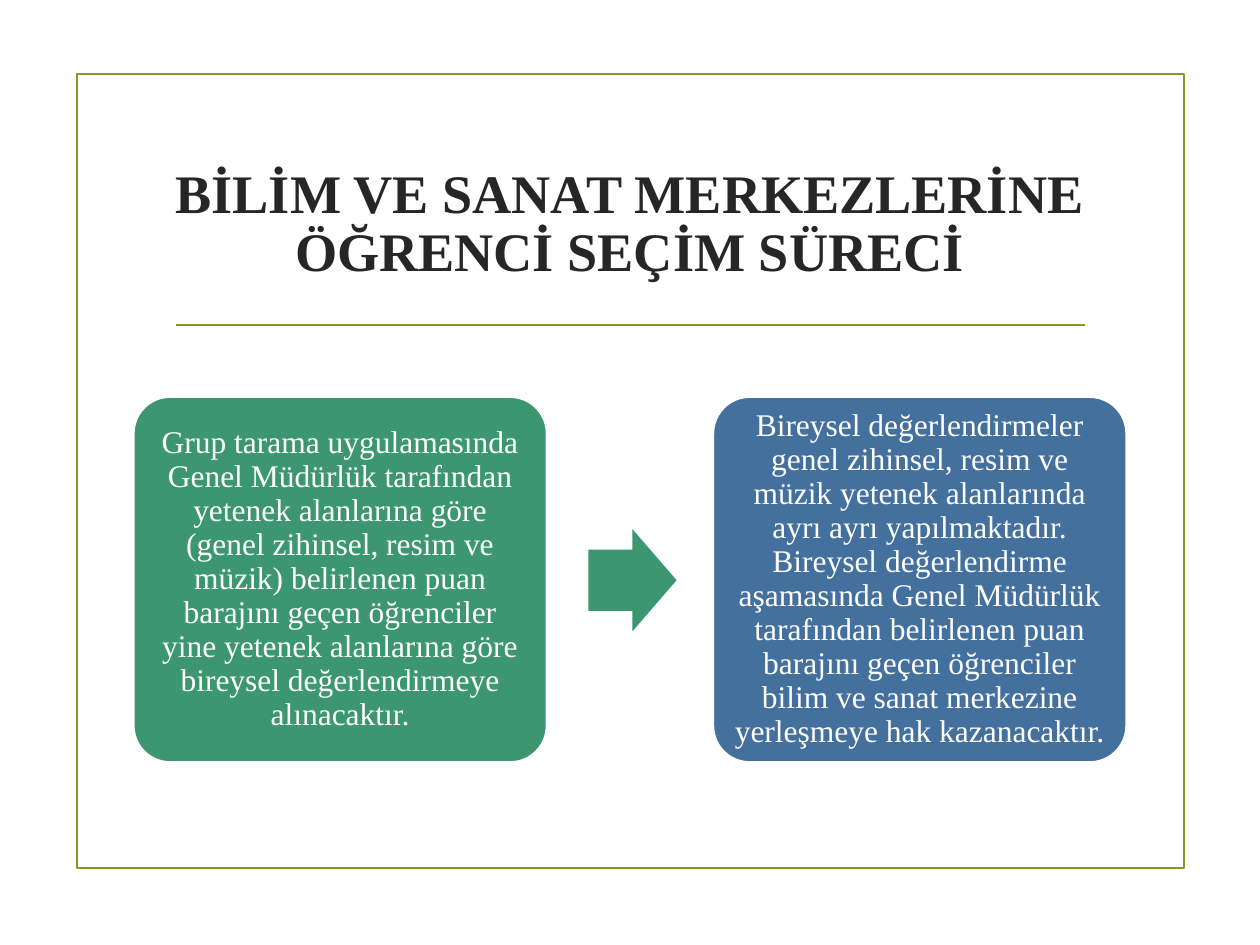
import pptx
import pptx.util
import pptx.dml.color
import pptx.enum.shapes
import pptx.enum.text
import lxml.etree
import pptx.oxml.ns

Inches = pptx.util.Inches
Pt = pptx.util.Pt
MSO_SHAPE = pptx.enum.shapes.MSO_SHAPE
COLORS = {"olive": "83992A", "green": "3C9770", "blue": "44709D",
          "title": "262626", "white": "FFFFFF"}
FONT = "Times New Roman"


def rgb(name):
    return pptx.dml.color.RGBColor.from_string(COLORS[name])


def write(tf, text, size, color, bold, after):
    tf.word_wrap = True
    tf.auto_size = pptx.enum.text.MSO_AUTO_SIZE.NONE
    tf.vertical_anchor = pptx.enum.text.MSO_ANCHOR.MIDDLE
    p = tf.paragraphs[0]
    p.text = text
    p.alignment = pptx.enum.text.PP_ALIGN.CENTER
    p.line_spacing = 0.9
    p.space_before = Pt(0)
    p.space_after = Pt(after)
    p.font.name = FONT
    p.font.size = Pt(size)
    p.font.bold = bold
    p.font.color.rgb = rgb(color)


prs = pptx.Presentation()
prs.slide_width = Inches(10)
prs.slide_height = Inches(7.5)
s = prs.slides.add_slide(prs.slide_layouts[5])

title = s.shapes.title
title.left, title.top = Inches(1.06), Inches(1.07)
title.width, title.height = Inches(7.87), Inches(1.43)
write(title.text_frame, "BİLİM VE SANAT MERKEZLERİNE ÖĞRENCİ SEÇİM SÜRECİ",
      31, "title", True, 6)

frame = s.shapes.add_shape(MSO_SHAPE.RECTANGLE, Inches(0.61), Inches(0.59),
                           Inches(8.79), Inches(6.3))
frame.shadow.inherit = False
frame.fill.background()
frame.line.color.rgb = rgb("olive")
frame.line.width = Pt(1.25)

rule = s.shapes.add_connector(pptx.enum.shapes.MSO_CONNECTOR.STRAIGHT,
                              Inches(1.4), Inches(2.58), Inches(8.61), Inches(2.58))
rule.line.color.rgb = rgb("olive")
rule.line.width = Pt(1.25)
lxml.etree.SubElement(rule._element.spPr, pptx.oxml.ns.qn("a:effectLst"))

steps = [
    (1.06, "green",
     "Grup tarama uygulamasında Genel Müdürlük tarafından yetenek alanlarına göre "
     "(genel zihinsel, resim ve müzik) belirlenen puan barajını geçen öğrenciler "
     "yine yetenek alanlarına göre bireysel değerlendirmeye alınacaktır."),
    (5.66, "blue",
     "Bireysel değerlendirmeler genel zihinsel, resim ve müzik yetenek alanlarında "
     "ayrı ayrı yapılmaktadır. Bireysel değerlendirme aşamasında Genel Müdürlük "
     "tarafından belirlenen puan barajını geçen öğrenciler bilim ve sanat merkezine "
     "yerleşmeye hak kazanacaktır."),
]
for left, color, text in steps:
    sp = s.shapes.add_shape(MSO_SHAPE.ROUNDED_RECTANGLE, Inches(left), Inches(3.15),
                            Inches(3.28), Inches(2.9))
    sp.adjustments[0] = 0.1
    sp.shadow.inherit = False
    sp.fill.solid()
    sp.fill.fore_color.rgb = rgb(color)
    sp.line.color.rgb = rgb("white")
    sp.line.width = Pt(1.25)
    tf = sp.text_frame
    tf.margin_left = tf.margin_right = tf.margin_top = tf.margin_bottom = Inches(0.07)
    write(tf, text, 18, "white", False, 6)

arrow = s.shapes.add_shape(MSO_SHAPE.RIGHT_ARROW, Inches(4.67), Inches(4.2),
                           Inches(0.7), Inches(0.81))
arrow.adjustments[0] = 0.6
arrow.adjustments[1] = 0.5
arrow.shadow.inherit = False
arrow.fill.solid()
arrow.fill.fore_color.rgb = rgb("green")
arrow.line.fill.background()

prs.save("out.pptx")
